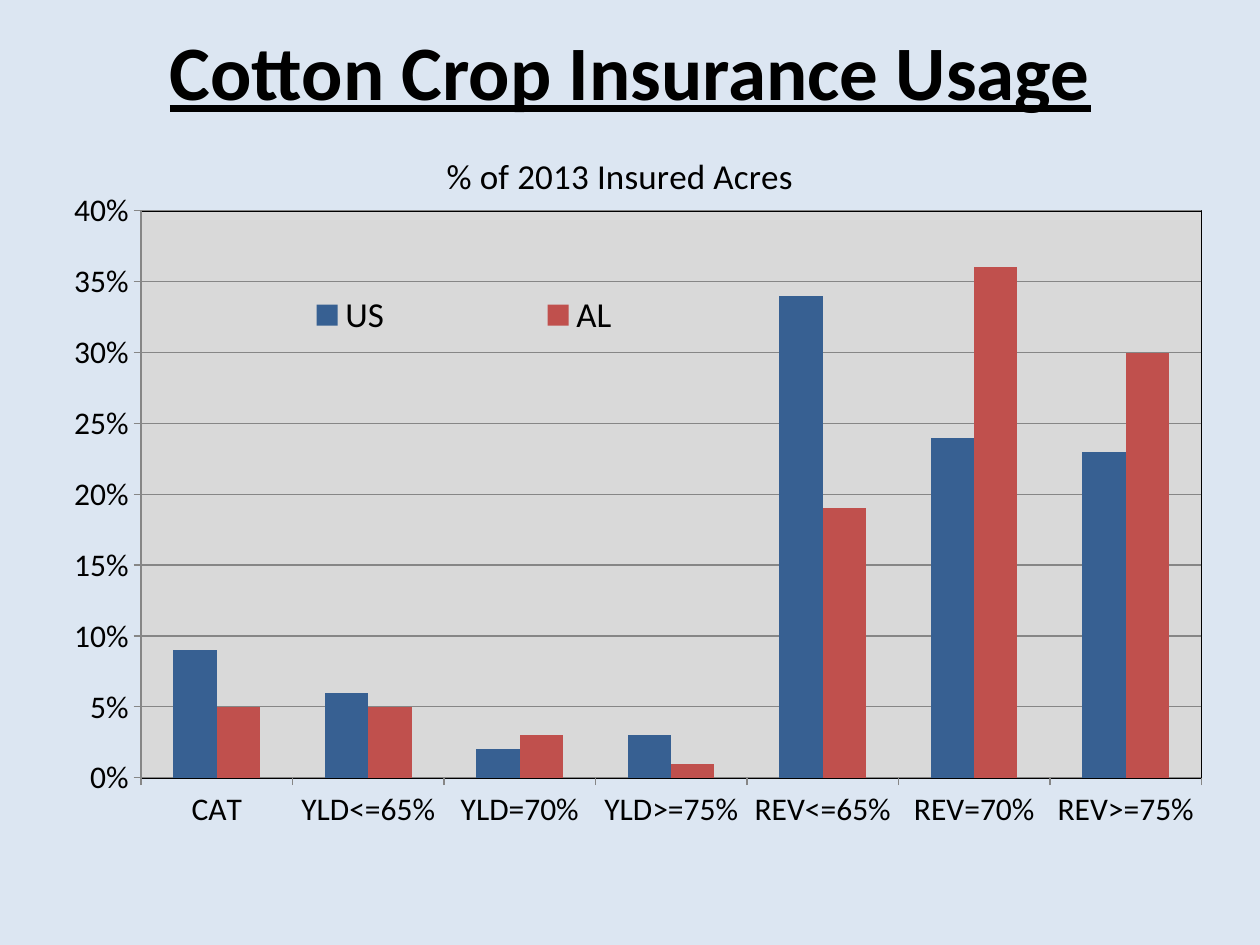
from lxml import etree
from pptx import Presentation
from pptx.chart.data import CategoryChartData
from pptx.dml.color import RGBColor
from pptx.enum.chart import XL_CHART_TYPE, XL_LEGEND_POSITION, XL_TICK_MARK
from pptx.enum.text import MSO_ANCHOR, PP_ALIGN
from pptx.oxml import parse_xml
from pptx.oxml.ns import nsdecls, qn
from pptx.util import Cm, Pt

COLUMNS = XL_CHART_TYPE.COLUMN_CLUSTERED
LEGEND_RIGHT = XL_LEGEND_POSITION.RIGHT
TICK_OUTSIDE = XL_TICK_MARK.OUTSIDE
MIDDLE = MSO_ANCHOR.MIDDLE
CENTER = PP_ALIGN.CENTER

FONT = "Calibri"
BLACK = "000000"
BACKGROUND = "DCE6F2"
PLOT_GRAY = "D9D9D9"
LINE_GRAY = "868686"

LEVELS = ["CAT", "YLD<=65%", "YLD=70%", "YLD>=75%",
          "REV<=65%", "REV=70%", "REV>=75%"]
# Region: (bar colour, share of insured acres by coverage level)
ACRES = {
    "US": ("376092", [0.09, 0.06, 0.02, 0.03, 0.34, 0.24, 0.23]),
    "AL": ("C0504D", [0.05, 0.05, 0.03, 0.01, 0.19, 0.36, 0.3]),
}


def color(hex_string):
    return RGBColor.from_string(hex_string)


def style_font(font, size, bold=False):
    font.name = FONT
    font.size = Pt(size)
    font.bold = bold
    font.color.rgb = color(BLACK)


def style_line(line, hex_string):
    line.width = Pt(0.75)
    line.color.rgb = color(hex_string)


def set_layout(element, index, inner=False, **fractions):
    """Place a chart part by fractions of the chart box."""
    for old in element.findall(qn("c:layout")):
        element.remove(old)
    layout = etree.Element(qn("c:layout"))
    manual = etree.SubElement(layout, qn("c:manualLayout"))
    settings = {"layoutTarget": "inner"} if inner else {}
    settings.update(xMode="edge", yMode="edge", **fractions)
    for name, value in settings.items():
        etree.SubElement(manual, qn(f"c:{name}")).set("val", str(value))
    element.insert(index, layout)


def add_title(slide, left, top, width, height):
    box = slide.shapes.add_textbox(left, top, width, height)
    frame = box.text_frame
    frame.word_wrap = True
    frame.vertical_anchor = MIDDLE
    paragraph = frame.paragraphs[0]
    paragraph.alignment = CENTER
    run = paragraph.add_run()
    run.text = "Cotton Crop Insurance Usage"
    style_font(run.font, 44, bold=True)
    run.font.underline = True


def add_usage_chart(slide, left, top, width, height):
    data = CategoryChartData(number_format="0%")
    data.categories = LEVELS
    for region, (_, shares) in ACRES.items():
        data.add_series(region, shares)
    chart = slide.shapes.add_chart(COLUMNS, left, top, width, height, data).chart
    style_font(chart.font, 18)

    # Columns
    plot = chart.plots[0]
    plot.gap_width = 150
    plot.overlap = 0
    plot.vary_by_categories = False
    for series, (fill_color, _) in zip(plot.series, ACRES.values()):
        series.format.fill.solid()
        series.format.fill.fore_color.rgb = color(fill_color)

    # Axes
    for axis in (chart.category_axis, chart.value_axis):
        axis.major_tick_mark = TICK_OUTSIDE
        style_font(axis.tick_labels.font, 18)
        style_line(axis.format.line, LINE_GRAY)
    value_axis = chart.value_axis
    value_axis.minimum_scale = 0
    value_axis.maximum_scale = 0.4
    value_axis.major_unit = 0.05
    value_axis.tick_labels.number_format = "0%"
    value_axis.tick_labels.number_format_is_linked = False
    value_axis.has_major_gridlines = True
    style_line(value_axis.major_gridlines.format.line, LINE_GRAY)

    # Chart title
    chart.has_title = True
    title = chart.chart_title
    run = title.text_frame.paragraphs[0].add_run()
    run.text = "% of 2013 Insured Acres"
    style_font(run.font, 20)
    title_element = chart._chartSpace.chart.find(qn("c:title"))
    set_layout(title_element, 1, x=0.35, y=0.02)
    title_element.find(qn("c:overlay")).set("val", "1")

    # Legend inside the plot
    chart.has_legend = True
    legend = chart.legend
    legend.position = LEGEND_RIGHT
    legend.include_in_layout = False
    style_font(legend.font, 20)
    set_layout(chart._chartSpace.chart.find(qn("c:legend")), 1,
               x=0.12, y=0.21, w=0.5, h=0.07)

    # Plot area
    plot_area = chart._chartSpace.chart.plotArea
    set_layout(plot_area, 0, inner=True, x=0.1, y=0.107, w=0.886, h=0.75)
    plot_area.append(parse_xml(
        f'<c:spPr {nsdecls("c", "a")}>'
        f'<a:solidFill><a:srgbClr val="{PLOT_GRAY}"/></a:solidFill>'
        f'<a:ln w="{Pt(1)}"><a:solidFill><a:srgbClr val="{BLACK}"/></a:solidFill></a:ln>'
        '</c:spPr>'))


def main():
    presentation = Presentation()
    presentation.slide_width = Cm(25.4)
    presentation.slide_height = Cm(19.05)
    slide = presentation.slides.add_slide(presentation.slide_layouts[6])
    slide.background.fill.solid()
    slide.background.fill.fore_color.rgb = color(BACKGROUND)
    add_title(slide, Cm(0.43), Cm(0.21), Cm(24.55), Cm(2.41))
    add_usage_chart(slide, Cm(0.43), Cm(2.62), Cm(24.13), Cm(15.24))
    presentation.save("out.pptx")


if __name__ == "__main__":
    main()
